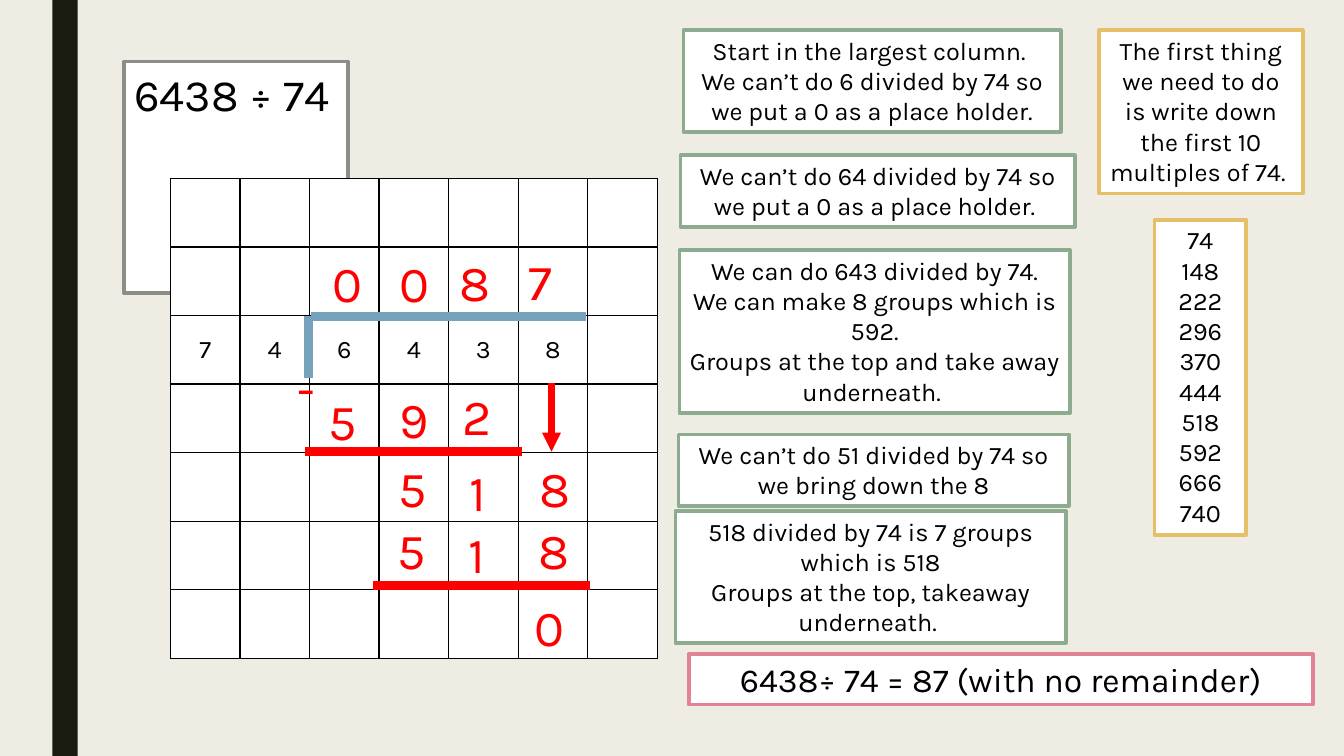
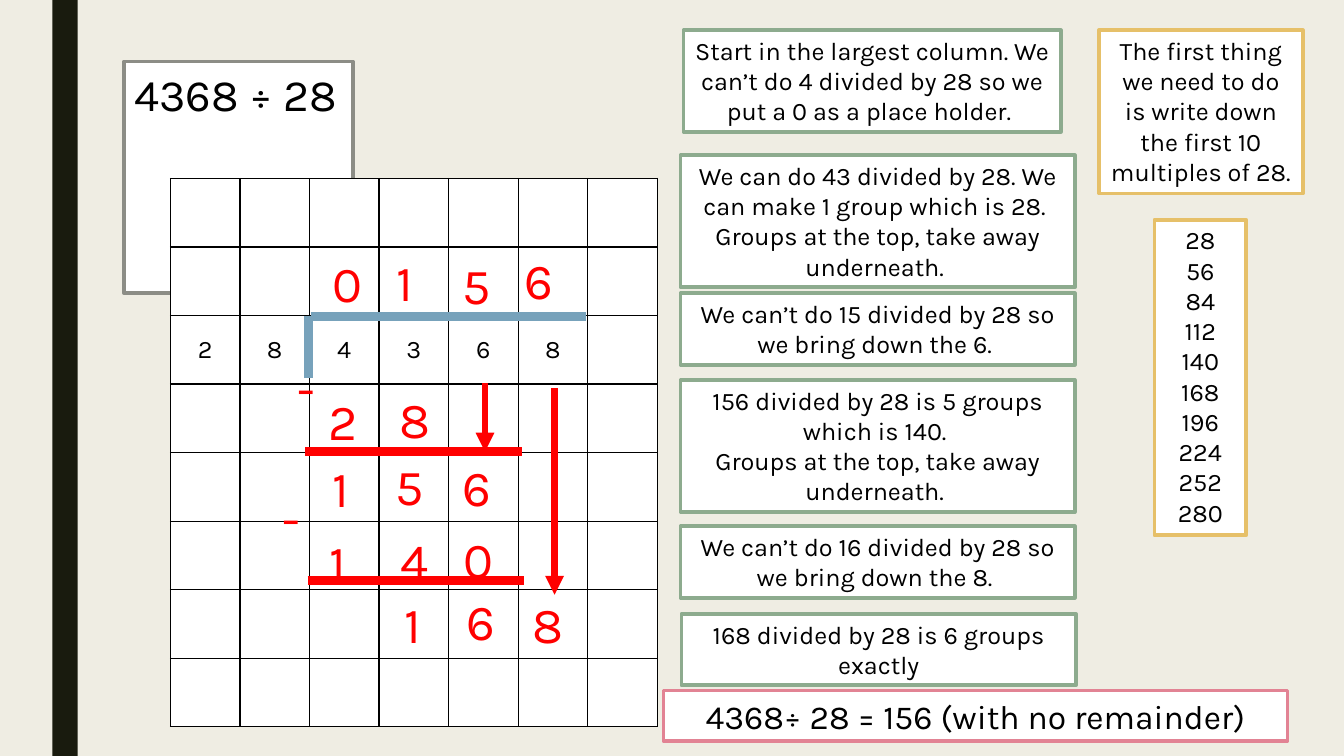
"""Build two worked long-division slides."""
import pptx
import pptx.util
import pptx.dml.color
import pptx.enum.shapes
import pptx.enum.text
import pptx.oxml
import pptx.oxml.ns
from dataclasses import dataclass
from pptx.util import Inches


@dataclass(frozen=True)
class Theme:
    font: str = "Karla"
    paper: str = "EFEDE3"
    band: str = "191B0E"
    white: str = "FFFFFF"
    ink: str = "000000"
    title_edge: str = "8C8D86"
    multiples_edge: str = "E6C069"
    step_edge: str = "8DAB8E"
    answer_edge: str = "E28394"
    bracket: str = "77A2BB"
    working: str = "FF0000"
    body_size: int = 18
    answer_size: int = 24
    title_size: int = 32
    digit_size: int = 36
    box_line: float = 2.75
    rule_line: float = 6
    arrow_line: float = 4.5


T = Theme()
ALIGN = pptx.enum.text.PP_ALIGN
GRID_LEFT, GRID_TOP = 1.69, 1.77
COLUMNS, COLUMN_WIDTH, ROW_HEIGHT = 7, 0.69, 0.68
NUMBER_ROW = 2
DIGIT_BOX = 0.71
BRACKET = [(3.06, 3.75, 3.06, 3.14), (3.08, 3.14, 5.81, 3.14)]

DIVISIONS = [
    {
        "dividend": 6438, "divisor": 74, "title_width": 2.22, "rows": 7,
        "steps": [
            (6.78, 0.3, 3.74, 1.01, ["Start in the largest column. ",
                "We can’t do 6 divided by 74 so we put a 0 as a place holder."]),
            (6.75, 1.54, 3.91, 0.71, [
                "We can’t do 64 divided by 74 so we put a 0 as a place holder. "]),
            (6.74, 2.48, 3.87, 1.62, ["We can do 643 divided by 74.",
                "We can make 8 groups which is 592.",
                "Groups at the top and take away underneath. "]),
            (6.73, 4.31, 3.87, 0.71, [
                "We can’t do 51 divided by 74 so we bring down the 8"]),
            (6.7, 5.07, 3.87, 1.31, ["518 divided by 74 is 7 groups which is 518",
                "Groups at the top, takeaway underneath. "]),
        ],
        "working": [
            ("0087", [(3.2, 2.45), (3.86, 2.45), (4.46, 2.44), (5.14, 2.43)]),
            ("-592", [(2.85, 3.49), (3.16, 3.82), (3.86, 3.8), (4.49, 3.77)]),
            ("518", [(3.85, 4.49), (4.56, 4.53), (5.25, 4.49)]),
            ("518", [(3.84, 5.1), (4.55, 5.14), (5.24, 5.1)]),
            ("0", [(5.2, 5.86)]),
        ],
        "rules": [(3.03, 4.48, 5.18, 4.48), (3.7, 5.81, 5.85, 5.81)],
        "arrows": [(5.47, 3.8, 5.47, 4.48)],
        "answer_at": (6.83, 6.49),
    },
    {
        "dividend": 4368, "divisor": 28, "title_width": 2.27, "rows": 8,
        "steps": [
            (6.78, 0.3, 3.74, 1.01, ["Start in the largest column. We can’t do 4 "
                "divided by 28 so we put a 0 as a place holder. "]),
            (6.75, 1.54, 3.91, 1.31, [
                "We can do 43 divided by 28. We can make 1 group which is 28. ",
                "Groups at the top, take away underneath. "]),
            (6.75, 2.91, 3.91, 0.71, [
                "We can’t do 15 divided by 28 so we bring down the 6. "]),
            (6.75, 3.77, 3.91, 1.31, ["156 divided by 28 is 5 groups which is 140. ",
                "Groups at the top, take away underneath. "]),
            (6.75, 5.22, 3.91, 0.71, [
                "We can’t do 16 divided by 28 so we bring down the 8. "]),
            (6.76, 6.09, 3.91, 0.71, ["168 divided by 28 is 6 groups exactly"]),
        ],
        "working": [
            ("0156", [(3.2, 2.45), (3.83, 2.44), (4.49, 2.47), (5.1, 2.42)]),
            ("-28", [(2.85, 3.49), (3.16, 3.82), (3.86, 3.8)]),
            ("156", [(3.2, 4.49), (3.82, 4.47), (4.49, 4.48)]),
            ("-140", [(2.7, 4.78), (3.17, 5.22), (3.87, 5.2), (4.5, 5.19)]),
            ("168", [(3.91, 5.83), (4.53, 5.81), (5.18, 5.83)]),
        ],
        "rules": [(3.03, 4.48, 5.18, 4.48), (3.05, 5.76, 5.2, 5.76)],
        "arrows": [(4.81, 3.8, 4.81, 4.48), (5.5, 3.85, 5.5, 5.9)],
        "answer_at": (6.58, 6.85),
    },
]


def rgb(value):
    return pptx.dml.color.RGBColor.from_string(value)


def paint(fill, color):
    fill.solid()
    fill.fore_color.rgb = rgb(color)


def write(tf, lines, size, color=T.ink, align=ALIGN.CENTER):
    for i, line in enumerate(lines):
        p = tf.add_paragraph() if i else tf.paragraphs[0]
        p.alignment = align
        r = p.add_run()
        r.text = line
        r.font.name, r.font.size = T.font, pptx.util.Pt(size)
        r.font.color.rgb = rgb(color)


def frame(sp, edge):
    paint(sp.fill, T.white)
    sp.line.color.rgb = rgb(edge)
    sp.line.width = pptx.util.Pt(T.box_line)


def add_text(s, at, lines, size, edge=None, **style):
    sp = s.shapes.add_textbox(*map(Inches, at))
    sp.text_frame.word_wrap = True
    sp.text_frame.auto_size = pptx.enum.text.MSO_AUTO_SIZE.SHAPE_TO_FIT_TEXT
    if edge:
        frame(sp, edge)
    write(sp.text_frame, lines, size, **style)


def add_line(s, ends, color, width, arrow=False):
    sp = s.shapes.add_connector(
        pptx.enum.shapes.MSO_CONNECTOR.STRAIGHT, *map(Inches, ends))
    sp.line.color.rgb = rgb(color)
    sp.line.width = pptx.util.Pt(width)
    if arrow:
        ln = sp.line._get_or_add_ln()
        tail = pptx.oxml.parse_xml(
            f'<a:tailEnd {pptx.oxml.ns.nsdecls("a")} type="triangle"/>')
        ln.append(tail)
    sp.element.spPr.append(
        pptx.oxml.parse_xml(f'<a:effectLst {pptx.oxml.ns.nsdecls("a")}/>'))


def border(cell):
    tcPr = cell._tc.get_or_add_tcPr()
    for i, side in enumerate(("lnL", "lnR", "lnT", "lnB")):
        tcPr.insert(i, pptx.oxml.parse_xml(
            f'<a:{side} {pptx.oxml.ns.nsdecls("a")} w="12700"><a:solidFill>'
            f'<a:srgbClr val="{T.ink}"/></a:solidFill></a:{side}>'))


def add_grid(s, rows, digits):
    size = COLUMNS * COLUMN_WIDTH, rows * ROW_HEIGHT
    table = s.shapes.add_table(
        rows, COLUMNS, *map(Inches, (GRID_LEFT, GRID_TOP, *size))).table
    table.first_row = table.horz_banding = False
    for column in table.columns:
        column.width = Inches(COLUMN_WIDTH)
    for row in table.rows:
        row.height = Inches(ROW_HEIGHT)
    for cell in table.iter_cells():
        paint(cell.fill, T.white)
        border(cell)
    for i, digit in enumerate(digits):
        cell = table.cell(NUMBER_ROW, i)
        cell.vertical_anchor = pptx.enum.text.MSO_ANCHOR.MIDDLE
        write(cell.text_frame, [digit], T.body_size)


def add_title(s, text, width):
    sp = s.shapes.title
    sp.left, sp.top, sp.width, sp.height = map(Inches, (1.23, 0.61, width, 0.64))
    tf = sp.text_frame
    tf.word_wrap = False
    tf.auto_size = pptx.enum.text.MSO_AUTO_SIZE.SHAPE_TO_FIT_TEXT
    tf.vertical_anchor = pptx.enum.text.MSO_ANCHOR.TOP
    frame(sp, T.title_edge)
    write(tf, [text], T.title_size, align=ALIGN.LEFT)


def style_master(prs, s):
    master = prs.slide_master
    paint(master.background.fill, T.paper)
    sp = s.shapes.add_shape(pptx.enum.shapes.MSO_SHAPE.RECTANGLE,
                            Inches(0.52), 0, Inches(0.25), prs.slide_height)
    sp.shadow.inherit = False
    paint(sp.fill, T.band)
    sp.line.fill.background()
    sp.element.nvSpPr.cNvPr.set("id", "100")
    master.shapes.element.insert(2, sp.element)


def fill_slide(s, d):
    dividend, divisor = d["dividend"], d["divisor"]
    add_title(s, f"{dividend} ÷ {divisor}", d["title_width"])
    add_text(s, (10.9, 0.3, 2.02, 1.62),
             ["The first thing we need to do is write down the first 10 "
              f"multiples of {divisor}. "], T.body_size, T.multiples_edge)
    add_text(s, (11.45, 2.18, 0.91, 3.13),
             [str(divisor * i) for i in range(1, 11)], T.body_size, T.multiples_edge)
    add_grid(s, d["rows"], f"{divisor}{dividend}")
    for ends in BRACKET:
        add_line(s, ends, T.bracket, T.rule_line)
    for *at, lines in d["steps"]:
        add_text(s, at, lines, T.body_size, T.step_edge)
    for digits, places in d["working"]:
        for digit, place in zip(digits, places):
            add_text(s, (*place, DIGIT_BOX, DIGIT_BOX), [digit], T.digit_size,
                     color=T.working, align=ALIGN.LEFT)
    for ends in d["rules"]:
        add_line(s, ends, T.working, T.rule_line)
    for ends in d["arrows"]:
        add_line(s, ends, T.working, T.arrow_line, arrow=True)
    add_text(s, (*d["answer_at"], 6.19, 0.5),
             [f"{dividend}÷ {divisor} = {dividend // divisor} (with no remainder)"],
             T.answer_size, T.answer_edge)


def main():
    prs = pptx.Presentation()
    prs.slide_width, prs.slide_height = Inches(13.33), Inches(7.5)
    slides = [prs.slides.add_slide(prs.slide_layouts[5]) for _ in DIVISIONS]
    style_master(prs, slides[0])
    for s, division in zip(slides, DIVISIONS):
        fill_slide(s, division)
    prs.save("out.pptx")


if __name__ == "__main__":
    main()
